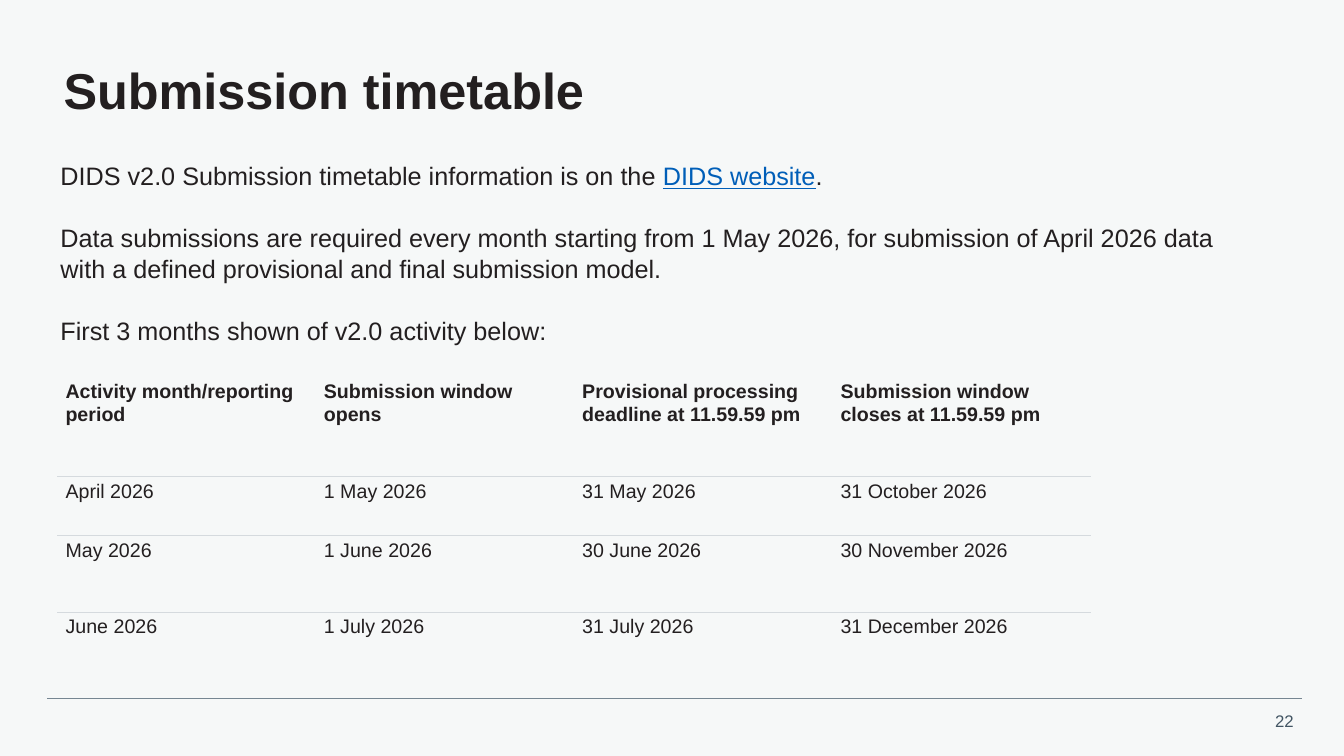
from dataclasses import dataclass

from lxml.etree import SubElement
from pptx import Presentation
from pptx.dml.color import RGBColor
from pptx.enum.shapes import MSO_CONNECTOR as Connector
from pptx.enum.text import MSO_ANCHOR as Anchor, MSO_AUTO_SIZE as AutoSize, PP_ALIGN as Align
from pptx.oxml import parse_xml
from pptx.oxml.ns import nsdecls, qn
from pptx.util import Inches, Pt


@dataclass(frozen=True)
class Theme:
    font: str = "Arial"
    background: str = "F6F8F8"
    text: str = "231F20"
    link: str = "005EB8"
    page_number: str = "425563"
    footer_rule: str = "768692"
    table_rule: str = "D5DADE"
    title_size: int = 36
    body_size: int = 18
    table_size: int = 14
    footer_size: int = 12


THEME = Theme()
NO_GRID_STYLE = "{2D5ABB26-0587-4C30-8999-92F81FD0307C}"

INTRODUCTION = [
    [("DIDS v2.0 Submission timetable information is on the ", False),
     ("DIDS website", True), (".", False)],
    [("Data submissions are required every month starting from 1 May 2026, "
      "for submission of April 2026 data with a defined provisional and final "
      "submission model.", False)],
    [("First 3 months shown of v2.0 activity below:", False)],
]

TIMETABLE = [
    ["Activity month/reporting period", "Submission window opens",
     "Provisional processing deadline at 11.59.59 pm",
     "Submission window closes at 11.59.59 pm"],
    ["April 2026", "1 May 2026", "31 May 2026", "31 October 2026"],
    ["May 2026", "1 June 2026", "30 June 2026", "30 November 2026"],
    ["June 2026", "1 July 2026", "31 July 2026", "31 December 2026"],
]
ROW_HEIGHTS = [1.46, 0.58, 0.76, 0.76]
RULE_WIDTHS = [1, 0.33, 0.33]


def color(value):
    return RGBColor.from_string(value)


def set_font(paragraph, size, value, bold=False):
    font = paragraph.font
    font.name, font.size, font.bold = THEME.font, Pt(size), bold
    font.color.rgb = color(value)


def place(shape, box):
    shape.left, shape.top, shape.width, shape.height = map(Inches, box)


def add_title(slide, box, text):
    title = slide.shapes.title
    place(title, box)
    frame = title.text_frame
    frame.text = text
    frame.auto_size = AutoSize.NONE
    frame.vertical_anchor = Anchor.MIDDLE
    frame.margin_left = frame.margin_right = frame.margin_top = frame.margin_bottom = 0
    paragraph = frame.paragraphs[0]
    paragraph.alignment = Align.LEFT
    paragraph.line_spacing = 0.9
    set_font(paragraph, THEME.title_size, THEME.text, bold=True)


def add_introduction(slide, box, paragraphs):
    body = slide.placeholders[1]
    place(body, box)
    frame = body.text_frame
    frame.auto_size = AutoSize.NONE
    frame.vertical_anchor = Anchor.TOP
    for index, pieces in enumerate(paragraphs):
        paragraph = frame.add_paragraph() if index else frame.paragraphs[0]
        paragraph.line_spacing = 1.04
        paragraph.space_before = Pt(0)
        paragraph.space_after = Pt(21.5)
        set_font(paragraph, THEME.body_size, THEME.text)
        properties = paragraph._p.get_or_add_pPr()
        properties.set("marL", "0")
        properties.set("indent", "0")
        properties.insert_element_before(
            parse_xml(f"<a:buNone {nsdecls('a')}/>"), "a:tabLst", "a:defRPr", "a:extLst")
        for text, is_link in pieces:
            run = paragraph.add_run()
            run.text = text
            if is_link:
                run.font.underline = True
                run.font.color.rgb = color(THEME.link)


def add_border(cell, side, width):
    cell._tc.get_or_add_tcPr().insert(0, parse_xml(
        f'<a:{side} {nsdecls("a")} w="{Pt(width)}"><a:solidFill>'
        f'<a:srgbClr val="{THEME.table_rule}"/></a:solidFill></a:{side}>'))


def add_timetable(slide, box, rows):
    frame = slide.shapes.add_table(len(rows), len(rows[0]), *map(Inches, box))
    table = frame.table
    table.horz_banding = False
    table._tbl.tblPr.find(qn("a:tableStyleId")).text = NO_GRID_STYLE
    for column in table.columns:
        column.width = Inches(box[2] / len(rows[0]))
    for row_index, values in enumerate(rows):
        is_header = row_index == 0
        table.rows[row_index].height = Inches(ROW_HEIGHTS[row_index])
        for column_index, text in enumerate(values):
            cell = table.cell(row_index, column_index)
            cell.text = text
            cell.fill.background()
            cell.margin_left = cell.margin_right = Inches(0.08)
            cell.margin_top = cell.margin_bottom = Inches(0.04)
            cell.vertical_anchor = Anchor.MIDDLE if is_header else Anchor.TOP
            set_font(cell.text_frame.paragraphs[0], THEME.table_size, THEME.text, is_header)
            if row_index < len(RULE_WIDTHS):
                add_border(cell, "lnB", RULE_WIDTHS[row_index])
            if not is_header:
                add_border(cell, "lnT", RULE_WIDTHS[row_index - 1])


def add_footer(slide, box, number):
    left, top, width, height = box
    rule = slide.shapes.add_connector(
        Connector.STRAIGHT, Inches(left), Inches(top), Inches(left + width), Inches(top))
    rule.line.color.rgb = color(THEME.footer_rule)
    rule.line.width = Pt(0.5)
    SubElement(rule._element.spPr, qn("a:effectLst"))
    number_width, number_height = 0.41, 0.3
    label = slide.shapes.add_textbox(
        Inches(left + width + 0.02 - number_width), Inches(top + height - number_height),
        Inches(number_width), Inches(number_height))
    label.text_frame.word_wrap = True
    label.text_frame.text = number
    paragraph = label.text_frame.paragraphs[0]
    paragraph.alignment = Align.RIGHT
    set_font(paragraph, THEME.footer_size, THEME.page_number)


def main():
    presentation = Presentation()
    presentation.slide_width = Inches(13.33)
    presentation.slide_height = Inches(7.5)
    slide = presentation.slides.add_slide(presentation.slide_layouts[1])
    slide.background.fill.solid()
    slide.background.fill.fore_color.rgb = color(THEME.background)
    add_footer(slide, (0.47, 6.93, 12.44, 0.37), "22")
    add_title(slide, (0.63, 0.45, 12.25, 0.95), "Submission timetable")
    add_introduction(slide, (0.5, 1.53, 11.81, 2.52), INTRODUCTION)
    add_timetable(slide, (0.57, 3.27, 10.25, 3.56), TIMETABLE)
    presentation.save("out.pptx")


if __name__ == "__main__":
    main()
